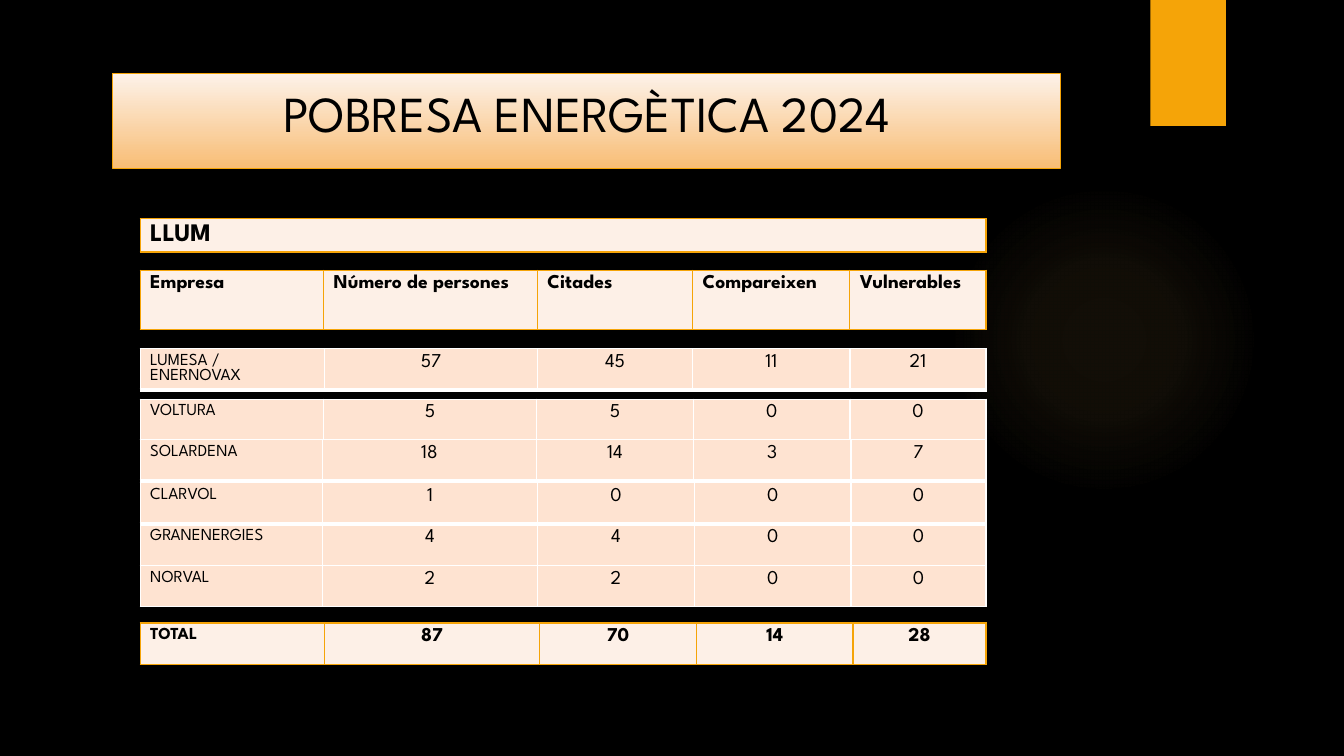
from lxml import etree
from pptx import Presentation
from pptx import util as u
from pptx.dml.color import RGBColor
from pptx.enum import shapes, text
from pptx.oxml.ns import qn

# Content: one entry per table, from back to front
TITLE = "POBRESA ENERGÈTICA 2024"
TABLES = [
    {"top": 2.68, "row": 0.59, "kind": "header", "cols": [1.82, 2.12, 1.54, 1.56, 1.35],
     "rows": [("Empresa", "Número de persones", "Citades", "Compareixen", "Vulnerables")]},
    {"top": 3.46, "row": 0.41, "kind": "company", "cols": [1.83, 2.11, 1.54, 1.56, 1.35],
     "rows": [("LUMESA / ENERNOVAX", "57", "45", "11", "21")]},
    {"top": 3.96, "row": 0.41, "kind": "company", "cols": [1.82, 2.11, 1.56, 1.55, 1.35],
     "rows": [("VOLTURA", "5", "5", "0", "0")]},
    {"top": 4.36, "row": 0.41, "kind": "company", "cols": [1.81, 2.12, 1.56, 1.56, 1.34],
     "rows": [("SOLARDENA", "18", "14", "3", "7")]},
    {"top": 4.79, "row": 0.41, "kind": "company", "cols": [1.81, 2.13, 1.56, 1.55, 1.34],
     "rows": [("CLARVOL", "1", "0", "0", "0"),
              ("GRANENERGIES", "4", "4", "0", "0"),
              ("NORVAL", "2", "2", "0", "0")]},
    {"top": 2.17, "row": 0.24, "kind": "section", "cols": [8.39], "rows": [("LLUM",)]},
    {"top": 6.18, "row": 0.41, "kind": "total", "cols": [1.83, 2.13, 1.56, 1.55, 1.32],
     "rows": [("TOTAL", "87", "70", "14", "28")]},
]

# Look
FONT = "League Spartan"
BLACK = RGBColor(0x00, 0x00, 0x00)
WHITE = RGBColor(0xFF, 0xFF, 0xFF)
AMBER = RGBColor(0xF5, 0xA4, 0x08)
GLOW = RGBColor(0xFA, 0xC9, 0x6A)
CREAM = RGBColor(0xFD, 0xF0, 0xE7)
PEACH = RGBColor(0xFE, 0xE3, 0xD1)
TITLE_STOPS = [RGBColor(0xFD, 0xF2, 0xE9), RGBColor(0xF8, 0xBD, 0x75)]
GLOW_STOPS = [(0, 7), (36, 6), (69, 0)]  # position and opacity in percent
TABLE_LEFT = 1.39
KINDS = {  # sizes: first column, other columns
    "header": {"fill": CREAM, "border": AMBER, "bold": True, "sizes": (14, 14)},
    "section": {"fill": CREAM, "border": AMBER, "bold": True, "sizes": (18, 18)},
    "total": {"fill": CREAM, "border": AMBER, "bold": True, "sizes": (12, 14)},
    "company": {"fill": PEACH, "border": WHITE, "bold": False, "sizes": (12, 14)},
}


def write(para, words, size, bold=False):
    span = para.add_run()
    span.text = words
    span.font.color.rgb = BLACK
    for name, value in {"name": FONT, "size": u.Pt(size), "bold": bold}.items():
        setattr(span.font, name, value)


def add_plain_shape(page, preset, *box):
    shape = page.shapes.add_shape(preset, *map(u.Inches, box))
    shape.shadow.inherit = False
    shape.line.fill.background()
    shape.fill.solid()
    shape.fill.fore_color.rgb = AMBER
    return shape


def fill_glow(shape):
    gradient = etree.Element(qn("a:gradFill"), rotWithShape="1")
    stops = etree.SubElement(gradient, qn("a:gsLst"))
    for position, opacity in GLOW_STOPS:
        stop = etree.SubElement(stops, qn("a:gs"), pos=str(position * 1000))
        color = etree.SubElement(stop, qn("a:srgbClr"), val=str(GLOW))
        etree.SubElement(color, qn("a:alpha"), val=str(opacity * 1000))
    radial = etree.SubElement(gradient, qn("a:path"), path="circle")
    etree.SubElement(radial, qn("a:fillToRect"), dict.fromkeys("ltrb", "50000"))
    properties = shape.fill._xPr
    properties.replace(properties.find(qn("a:solidFill")), gradient)


def set_borders(cell, color, bottom):
    properties = cell._tc.get_or_add_tcPr()
    for side, width in (("L", 1), ("R", 1), ("T", 1), ("B", bottom)):
        line = etree.SubElement(properties, qn(f"a:ln{side}"), w=str(u.Pt(width)))
        solid = etree.SubElement(line, qn("a:solidFill"))
        etree.SubElement(solid, qn("a:srgbClr"), val=str(color))


def add_band(page, data):
    rows, cols, look = data["rows"], data["cols"], KINDS[data["kind"]]
    frame = page.shapes.add_table(
        len(rows), len(cols), u.Inches(TABLE_LEFT), u.Inches(data["top"]),
        u.Inches(sum(cols)), u.Inches(data["row"] * len(rows)))
    table = frame.table
    table.first_row = table.horz_banding = False
    for column, width in zip(table.columns, cols):
        column.width = u.Inches(width)
    for r, row in enumerate(rows):
        # The first company row of each table closes with a thick rule
        bottom = 3 if data["kind"] == "company" and r == 0 else 1
        for c, words in enumerate(row):
            cell = table.cell(r, c)
            set_borders(cell, look["border"], bottom)
            cell.fill.solid()
            cell.fill.fore_color.rgb = look["fill"]
            para = cell.text_frame.paragraphs[0]
            if c and data["kind"] != "header":
                para.alignment = text.PP_ALIGN.CENTER
            write(para, words, look["sizes"][min(c, 1)], look["bold"])


def add_title(page):
    title = page.shapes.title
    box = {"left": 1.12, "top": 0.73, "width": 9.4, "height": 0.94}
    for name, value in box.items():
        setattr(title, name, u.Inches(value))
    title.fill.gradient()
    title.fill.gradient_angle = 270
    for stop, color, position in zip(title.fill.gradient_stops, TITLE_STOPS, (0, 1)):
        stop.color.rgb = color
        stop.position = position
    title.line.color.rgb = AMBER
    title.line.width = u.Pt(0.75)
    layout = {"word_wrap": True, "auto_size": text.MSO_AUTO_SIZE.NONE,
              "vertical_anchor": text.MSO_ANCHOR.MIDDLE, "margin_bottom": u.Inches(0.22)}
    for name, value in layout.items():
        setattr(title.text_frame, name, value)
    para = title.text_frame.paragraphs[0]
    para.alignment = text.PP_ALIGN.CENTER
    write(para, TITLE, 36)


def main():
    deck = Presentation()
    deck.slide_width, deck.slide_height = u.Inches(13.33), u.Inches(7.5)
    page = deck.slides.add_slide(deck.slide_layouts[5])
    page.background.fill.solid()
    page.background.fill.fore_color.rgb = BLACK

    # Backdrop
    fill_glow(add_plain_shape(page, shapes.MSO_SHAPE.OVAL, 9.41, 1.83, 3.08, 3.08))
    add_plain_shape(page, shapes.MSO_SHAPE.RECTANGLE, 11.41, 0, 0.75, 1.25)

    # Tables and title
    for data in TABLES:
        add_band(page, data)
    add_title(page)
    deck.save("out.pptx")


if __name__ == "__main__":
    main()
